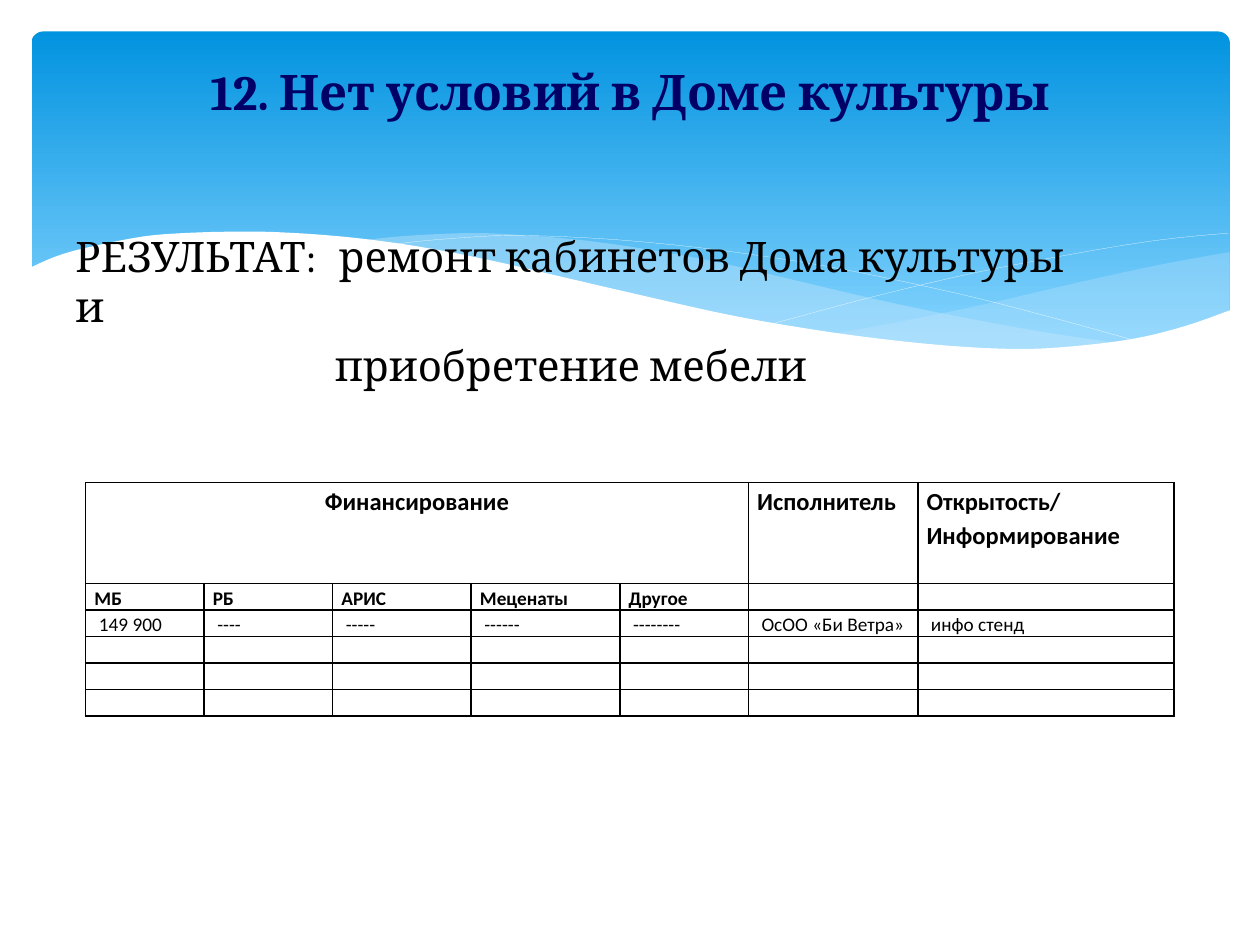
"""Build the slide about the House of Culture: wave banner, result text and funding table."""
import pptx
import pptx.dml.color
import pptx.enum.shapes
import pptx.enum.text
import pptx.oxml
import pptx.oxml.ns
import pptx.util

RGBColor = pptx.dml.color.RGBColor
ALIGN = pptx.enum.text.PP_ALIGN
ANCHOR = pptx.enum.text.MSO_ANCHOR

BLACK = RGBColor(0x00, 0x00, 0x00)
WHITE = RGBColor(0xFF, 0xFF, 0xFF)
NAVY = RGBColor(0x00, 0x00, 0x66)
SKY = RGBColor(0x02, 0x93, 0xE0)
LIGHT_SKY = RGBColor(0x83, 0xD3, 0xFE)
MIST = RGBColor(0xC6, 0xE7, 0xFC)

GRID_COLUMNS, GRID_ROWS = 20, 15
UNIT = pptx.util.Inches(0.5)

TITLE = "12. Нет условий в Доме культуры"
RESULT = ["РЕЗУЛЬТАТ:\tремонт кабинетов Дома культуры\vи", "приобретение мебели"]
RESULT_TAB, RESULT_INDENT = 4.18, 4.12

BANNER_BOX = (0.5, 0.5, 19.02, 5.4)
TITLE_BOX = (1, 0.74, 18, 1.4)
RESULT_BOX = (1, 3.56, 18.3, 1.98)
TABLE_BOX = (1.36, 7.66, 17.28, 3.72)

TABLE_COLUMNS = [1.88, 2.04, 2.2, 2.36, 2.04, 2.69, 4.07]
TABLE_ROWS = [1.6] + [0.42] * 5
TABLE_TEXT = [
    ["Финансирование", "", "", "", "", "Исполнитель", "Открытость/\vИнформирование"],
    ["МБ", "РБ", "АРИС", "Меценаты", "Другое"],
    ["149 900", "----", "-----", "------", "--------", "ОсОО «Би Ветра»", "инфо стенд"],
]
ROW_FORMATS = [
    {"size": pptx.util.Pt(14), "bold": True},
    {"size": pptx.util.Pt(11), "bold": True},
    {"size": pptx.util.Pt(11), "bold": False},
]
ROW_MARGINS = [0.14, 0.14, 0.21]

RIGHT_WAVE = [
    [(19.52, 4), (18.42, 4.2), (17.22, 4.46), (15.58, 4.84), (14.12, 5.14), (13.22, 5.3)],
    [(13.22, 5.3), (14.1, 5.42), (15.14, 5.52), (16.28, 5.56), (17.26, 5.52), (18.1, 5.38),
     (18.84, 5.18), (19.52, 4.94)],
]
MIDDLE_WAVE = [
    [(17.86, 5.46), (16.74, 5.3), (15.5, 5.08), (14.12, 4.8), (12.58, 4.44), (11.38, 4.16),
     (10.28, 3.96), (9.3, 3.82), (8.4, 3.74), (7.6, 3.7), (6.88, 3.72), (6.26, 3.76), (5.72, 3.82)],
    [(5.72, 3.82), (6.84, 3.98), (8.08, 4.22), (8.98, 4.44), (10.6, 4.8), (12.02, 5.1),
     (13.3, 5.32), (14.44, 5.48), (15.46, 5.54), (16.36, 5.56), (17.14, 5.54), (17.86, 5.46)],
]
FALLING_LINE = [
    [(6.18, 3.9), (6.56, 3.84), (7.26, 3.78), (8.02, 3.74), (9, 3.76), (10.2, 3.84),
     (11.64, 4), (13.3, 4.26), (15.2, 4.66), (16.62, 5.02), (18.14, 5.44)],
]
RISING_LINE = [
    [(12.26, 5.14), (13.9, 4.7), (15.52, 4.32), (17.32, 3.98), (18.48, 3.8), (19.5, 3.7)],
]
WHITE_WAVE = [
    [(19.54, 4.92), (18.8, 5.18), (17.98, 5.38), (17, 5.5), (16.18, 5.54), (15.22, 5.5),
     (14.16, 5.4), (12.96, 5.24), (11.58, 5), (10.06, 4.66), (8.94, 4.4), (7.82, 4.14),
     (6.8, 3.94), (5.84, 3.8), (5, 3.72), (4.22, 3.68), (3.54, 3.68), (2.92, 3.7),
     (2.38, 3.74), (1.9, 3.82), (1.52, 3.9), (1.18, 3.98), (0.92, 4.06), (0.72, 4.14), (0.46, 4.26)],
    [(0.46, 6.58), (19.54, 6.58)],
]
CURVES = [
    {"edges": RIGHT_WAVE, "fill": MIST, "opacity": 29},
    {"edges": MIDDLE_WAVE, "fill": MIST, "opacity": 40},
    {"edges": FALLING_LINE, "line": WHITE},
    {"edges": RISING_LINE, "line": WHITE},
    {"edges": WHITE_WAVE, "fill": WHITE, "opacity": 100},
]


def grid(*lengths):
    return [pptx.util.Emu(round(length * UNIT)) for length in lengths]


def apply(target, formats):
    for name, value in formats.items():
        setattr(target, name, value)


def add_xml(parent, tag, position=None, **attributes):
    element = pptx.oxml.parse_xml(f"<a:{tag} {pptx.oxml.ns.nsdecls('a')}/>")
    for name, value in attributes.items():
        element.set(name, str(value))
    parent.insert(len(parent) if position is None else position, element)
    return element


def smooth_edge(points, steps=5):
    """Return points on a Catmull-Rom curve through the given points."""
    padded = [points[0], *points, points[-1]]
    curve = [points[0]]
    for before, start, end, after in zip(padded, padded[1:], padded[2:], padded[3:]):
        for step in range(1, steps + 1):
            t = step / steps
            curve.append(tuple(
                (2 * b + (c - a) * t + (2 * a - 5 * b + 4 * c - d) * t ** 2
                 + (3 * b - a - 3 * c + d) * t ** 3) / 2
                for a, b, c, d in zip(before, start, end, after)))
    return curve


def add_banner(slide):
    shape = slide.shapes.add_shape(
        pptx.enum.shapes.MSO_SHAPE.ROUNDED_RECTANGLE, *grid(*BANNER_BOX))
    shape.adjustments[0] = 0.034
    shape.shadow.inherit = False
    shape.line.fill.background()
    shape.fill.gradient()
    shape.fill.gradient_angle = 270
    for stop, color, position in zip(shape.fill.gradient_stops, (SKY, LIGHT_SKY), (0, 0.9)):
        stop.color.rgb = color
        stop.position = position


def add_curve(slide, curve):
    points = [grid(*point) for edge in curve["edges"] for point in smooth_edge(edge)]
    builder = slide.shapes.build_freeform(*points[0], scale=1.0)
    builder.add_line_segments(points[1:], close="fill" in curve)
    shape = builder.convert_to_shape()
    shape.shadow.inherit = False
    if "fill" in curve:
        shape.fill.solid()
        shape.fill.fore_color.rgb = curve["fill"]
        shape.line.fill.background()
        color = shape.fill._xPr.find(".//" + pptx.oxml.ns.qn("a:srgbClr"))
        add_xml(color, "alpha", val=curve["opacity"] * 1000)
    else:
        shape.fill.background()
        shape.line.color.rgb = curve["line"]
        shape.line.width = pptx.util.Pt(0.1)


def add_text(slide, box, lines, font, color, paragraph_format, anchor):
    frame = slide.shapes.add_textbox(*grid(*box)).text_frame
    apply(frame, {"word_wrap": True, "vertical_anchor": anchor})
    frame.text = "\n".join(lines)
    for paragraph in frame.paragraphs:
        apply(paragraph, paragraph_format)
        for run in paragraph.runs:
            apply(run.font, font)
            run.font.color.rgb = color
    return frame.paragraphs


def format_cell(cell, text, font, margin):
    left, right = grid(margin, 0.14)
    apply(cell, {"margin_left": left, "margin_right": right, "margin_top": 0, "margin_bottom": 0})
    cell.fill.background()
    properties = cell._tc.get_or_add_tcPr()
    for position, side in enumerate(("lnL", "lnR", "lnT", "lnB")):
        border = add_xml(properties, side, position, w=12700)
        add_xml(add_xml(border, "solidFill"), "srgbClr", val=BLACK)
    paragraph = cell.text_frame.paragraphs[0]
    paragraph.line_spacing = 1.15
    if text:
        paragraph.text = text
    else:
        add_xml(paragraph._p, "endParaRPr", sz=1100)
    for run in paragraph.runs:
        apply(run.font, {"name": "Calibri", **font})
        run.font.color.rgb = BLACK


def add_funding_table(slide):
    table = slide.shapes.add_table(
        len(TABLE_ROWS), len(TABLE_COLUMNS), *grid(*TABLE_BOX)).table
    apply(table, {"first_row": False, "horz_banding": False})
    for column, width in zip(table.columns, grid(*TABLE_COLUMNS)):
        column.width = width
    for row_index, height in enumerate(grid(*TABLE_ROWS)):
        table.rows[row_index].height = height
        texts = TABLE_TEXT[row_index] if row_index < len(TABLE_TEXT) else []
        style = min(row_index, len(ROW_FORMATS) - 1)
        for column_index in range(len(TABLE_COLUMNS)):
            text = texts[column_index] if column_index < len(texts) else ""
            format_cell(table.cell(row_index, column_index), text,
                        ROW_FORMATS[style], ROW_MARGINS[style])
    table.cell(0, 0).merge(table.cell(0, 4))
    table.cell(0, 0).text_frame.paragraphs[0].alignment = ALIGN.CENTER


def main():
    presentation = pptx.Presentation()
    width, height = grid(GRID_COLUMNS, GRID_ROWS)
    apply(presentation, {"slide_width": width, "slide_height": height})
    slide = presentation.slides.add_slide(presentation.slide_layouts[6])
    add_banner(slide)
    for curve in CURVES:
        add_curve(slide, curve)
    add_text(slide, TITLE_BOX, [TITLE],
             {"name": "Cambria", "size": pptx.util.Pt(28), "bold": True}, NAVY,
             {"alignment": ALIGN.CENTER}, ANCHOR.MIDDLE)
    first, second = add_text(slide, RESULT_BOX, RESULT,
                             {"name": "Cambria", "size": pptx.util.Pt(24)}, BLACK,
                             {"alignment": ALIGN.LEFT, "space_before": pptx.util.Pt(4.8)},
                             ANCHOR.TOP)
    tab, indent = grid(RESULT_TAB, RESULT_INDENT)
    add_xml(add_xml(first._p.get_or_add_pPr(), "tabLst"), "tab", pos=int(tab), algn="l")
    second._p.get_or_add_pPr().set("marL", str(int(indent)))
    add_funding_table(slide)
    presentation.save("out.pptx")


if __name__ == "__main__":
    main()
